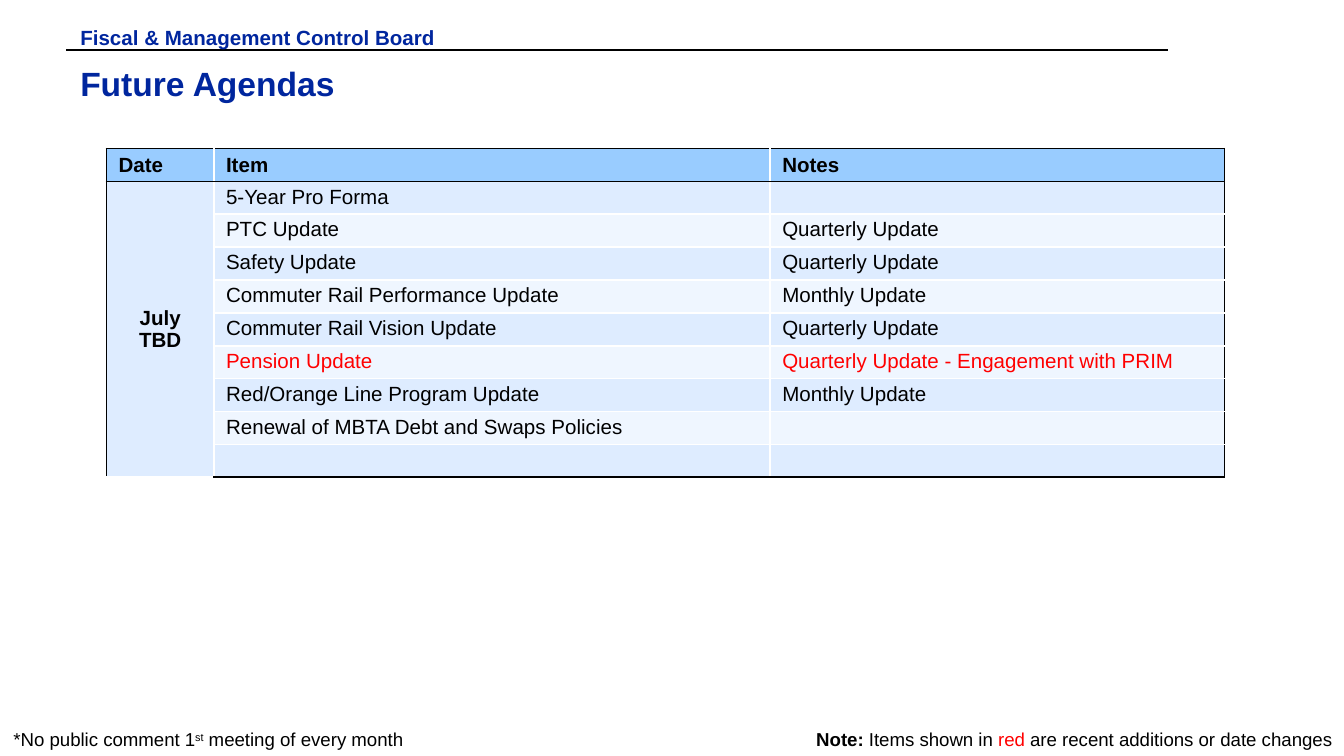
from dataclasses import dataclass

from lxml import etree
from pptx import Presentation
from pptx.dml.color import RGBColor
from pptx.enum import shapes, text
from pptx.oxml import ns
from pptx.util import Pt


@dataclass(frozen=True)
class Theme:
    font: str = "Arial"
    navy: str = "00269E"
    black: str = "000000"
    white: str = "FFFFFF"
    red: str = "FF0000"
    header_fill: str = "99CCFF"
    bands: tuple = ("DEECFF", "EFF6FF")
    title_size: int = 18
    body_size: int = 11
    footer_size: int = 10


THEME = Theme()
INSET = 6.5
ROW_HEIGHT = 17.1
COLUMN_WIDTHS = (57.6, 298, 243.4)
HEADINGS = ("Date", "Item", "Notes")
MEETING_DATE = "July\vTBD"
AGENDA = (
    ("5-Year Pro Forma", ""),
    ("PTC Update", "Quarterly Update"),
    ("Safety Update", "Quarterly Update"),
    ("Commuter Rail Performance Update", "Monthly Update"),
    ("Commuter Rail Vision Update", "Quarterly Update"),
    ("Pension Update", "Quarterly Update - Engagement with PRIM"),
    ("Red/Orange Line Program Update", "Monthly Update"),
    ("Renewal of MBTA Debt and Swaps Policies", ""),
    ("", ""),
)
NEW_ITEMS = ("Pension Update",)


def style_run(run, size, color=THEME.black, bold=False):
    run.font.name = THEME.font
    run.font.size = Pt(size)
    run.font.bold = bold
    run.font.color.rgb = RGBColor.from_string(color)


def add_text(slide, left, top, width, height, pieces, size,
             inset_top=3.6, align=text.PP_ALIGN.LEFT):
    box = slide.shapes.add_textbox(Pt(left), Pt(top), Pt(width), Pt(height))
    frame = box.text_frame
    frame.word_wrap = True
    frame.margin_left = frame.margin_right = Pt(INSET)
    frame.margin_top, frame.margin_bottom = Pt(inset_top), Pt(3)
    paragraph = frame.paragraphs[0]
    paragraph.alignment = align
    for words, color, bold in pieces:
        run = paragraph.add_run()
        run.text = words
        style_run(run, size, color, bold)
    return paragraph


def add_rule(slide, left, right, y):
    rule = slide.shapes.add_connector(
        shapes.MSO_CONNECTOR.STRAIGHT, Pt(left), Pt(y), Pt(right), Pt(y))
    rule.line.color.rgb = RGBColor.from_string(THEME.black)
    rule.line.width = Pt(1)
    etree.SubElement(rule._element.spPr, ns.qn("a:effectLst"))


def set_borders(cell, colors):
    properties = cell._tc.get_or_add_tcPr()
    for side, color in colors.items():
        line = etree.SubElement(properties, ns.qn(f"a:ln{side}"), w=str(Pt(1)))
        fill = etree.SubElement(line, ns.qn("a:solidFill"))
        etree.SubElement(fill, ns.qn("a:srgbClr"), val=color)


def fill_cell(cell, words, fill, color, bold):
    cell.fill.solid()
    cell.fill.fore_color.rgb = RGBColor.from_string(fill)
    cell.margin_left = cell.margin_right = Pt(INSET)
    cell.margin_top = cell.margin_bottom = Pt(2.2)
    paragraph = cell.text_frame.paragraphs[0]
    paragraph.text = words
    for run in paragraph.runs:
        style_run(run, THEME.body_size, color, bold)
    end = paragraph._p.get_or_add_endParaRPr()
    end.set("sz", str(THEME.body_size * 100))


def add_agenda(slide, left, top):
    rows = [HEADINGS] + [("", *entry) for entry in AGENDA]
    rows[1] = (MEETING_DATE, *AGENDA[0])
    last_row, last_column = len(rows) - 1, len(HEADINGS) - 1
    table = slide.shapes.add_table(
        len(rows), len(HEADINGS), Pt(left), Pt(top),
        Pt(sum(COLUMN_WIDTHS)), Pt(ROW_HEIGHT * len(rows))).table
    for column, width in zip(table.columns, COLUMN_WIDTHS):
        column.width = Pt(width)
    for r, entry in enumerate(rows):
        table.rows[r].height = Pt(ROW_HEIGHT)
        for c, words in enumerate(entry):
            cell = table.cell(r, c)
            edges = {"L": c == 0, "R": c == last_column,
                     "T": r <= 1, "B": r in (0, last_row)}
            set_borders(cell, {side: THEME.black if outer else THEME.white
                               for side, outer in edges.items()})
            band = THEME.bands[0 if c == 0 else (r - 1) % 2]
            fill_cell(cell, words, THEME.header_fill if r == 0 else band,
                      THEME.red if entry[1] in NEW_ITEMS else THEME.black,
                      r == 0 or c == 0)
            if r == 0:
                cell.vertical_anchor = text.MSO_ANCHOR.MIDDLE
    date = table.cell(1, 0)
    date.merge(table.cell(last_row, 0))
    date.vertical_anchor = text.MSO_ANCHOR.MIDDLE
    date.text_frame.paragraphs[0].alignment = text.PP_ALIGN.CENTER


def main():
    deck = Presentation()
    deck.slide_width, deck.slide_height = Pt(720), Pt(405)
    slide = deck.slides.add_slide(deck.slide_layouts[6])

    add_rule(slide, 35.5, 625.7, 26.6)
    comment = add_text(slide, 0.7, 386.6, 299.5, 18.7, [
        ("*No public comment 1", THEME.black, False),
        ("st", THEME.black, False),
        (" meeting of every month", THEME.black, False),
    ], THEME.footer_size)
    comment.runs[1].font._element.set("baseline", "30000")
    add_text(slide, 417.6, 386.6, 302.4, 18.7, [
        ("Note: ", THEME.black, True),
        ("Items shown in ", THEME.black, False),
        ("red", THEME.red, False),
        (" are recent additions or date changes", THEME.black, False),
    ], THEME.footer_size, align=text.PP_ALIGN.RIGHT)
    add_text(slide, 36.5, 28.8, 602, 34.6,
             [("Future Agendas", THEME.navy, True)], THEME.title_size, 5)
    add_text(slide, 36.5, 8.6, 245.5, 13.7,
             [("Fiscal & Management Control Board", THEME.navy, True)],
             THEME.body_size, 5)
    add_agenda(slide, 57, 79.6)

    deck.save("out.pptx")


if __name__ == "__main__":
    main()
